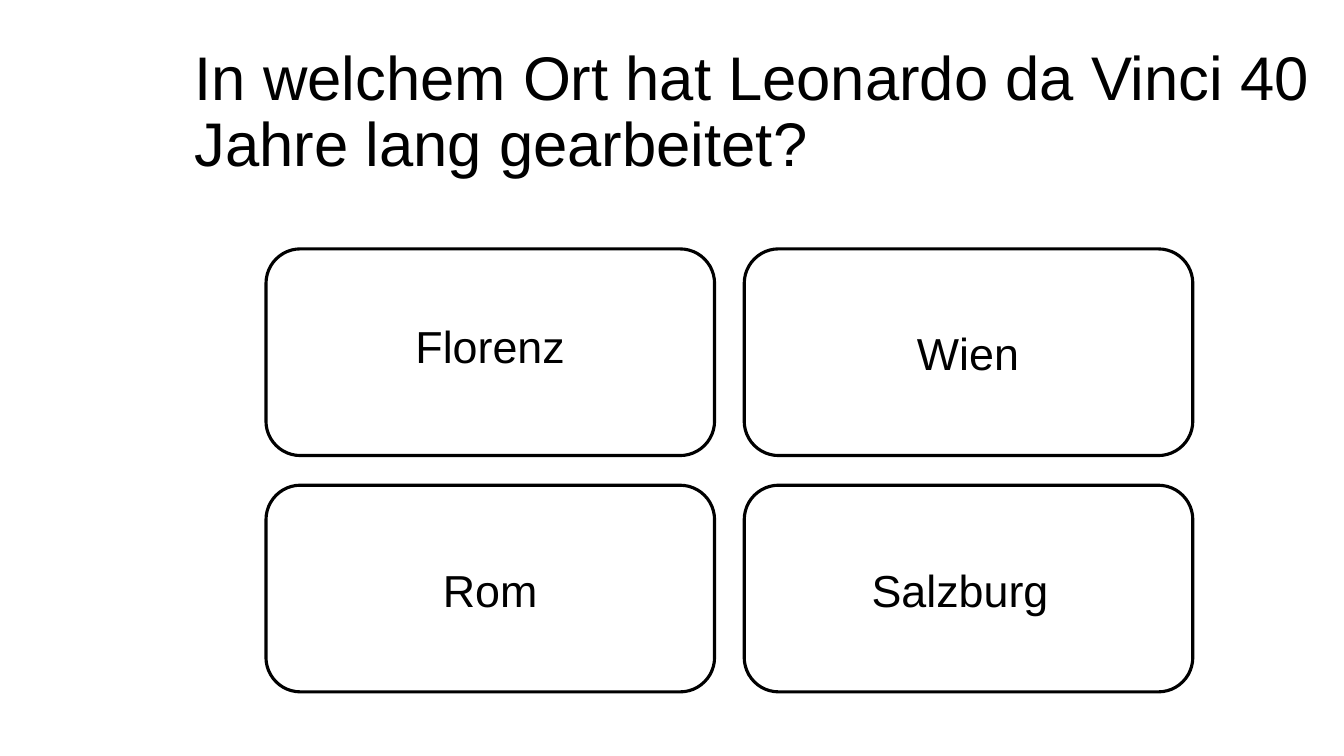
from pptx import Presentation
from pptx.dml.color import RGBColor
from pptx.enum.shapes import MSO_SHAPE
from pptx.enum.text import MSO_ANCHOR, PP_ALIGN
from pptx.util import Pt

ROUNDED = MSO_SHAPE.ROUNDED_RECTANGLE
TOP, MIDDLE = MSO_ANCHOR.TOP, MSO_ANCHOR.MIDDLE
LEFT, CENTER = PP_ALIGN.LEFT, PP_ALIGN.CENTER
BLANK_LAYOUT = 6

QUESTION = "In welchem Ort hat Leonardo da Vinci 40 Jahre lang gearbeitet?"
# Answer, left and top of its label, in reading order
ANSWERS = [
    ("Florenz", 210.2, 223.9),
    ("Wien", 551.5, 229),
    ("Rom", 210.2, 398.2),
    ("Salzburg", 545.8, 398.2),
]

INK = "000000"
COLUMNS = 2
CARD_LEFT, CARD_TOP = 190, 177.8
CARD_WIDTH, CARD_HEIGHT = 320.4, 147.6
GAP = 21.2
LABEL_WIDTH, LABEL_HEIGHT = 280, 46

QUESTION_FORMAT = {"alignment": LEFT, "line_spacing": 0.9}
ANSWER_FORMAT = {"alignment": CENTER}


def color(code):
    return RGBColor.from_string(code)


def add_text(page, text, frame, size, anchor, paragraph_format):
    box = page.shapes.add_textbox(*map(Pt, frame)).text_frame
    box.word_wrap = True
    box.vertical_anchor = anchor
    para = box.paragraphs[0]
    for name, value in paragraph_format.items():
        setattr(para, name, value)
    span = para.add_run()
    span.text = text
    for name, value in {"name": "Arial", "size": Pt(size)}.items():
        setattr(span.font, name, value)
    span.font.color.rgb = color(INK)


def add_card(page, index):
    row, column = divmod(index, COLUMNS)
    left = CARD_LEFT + column * (CARD_WIDTH + GAP)
    top = CARD_TOP + row * (CARD_HEIGHT + GAP)
    frame = (left, top, CARD_WIDTH, CARD_HEIGHT)
    card = page.shapes.add_shape(ROUNDED, *map(Pt, frame))
    card.shadow.inherit = False
    card.fill.background()
    card.line.color.rgb = color(INK)
    card.line.width = Pt(2.25)


def main():
    deck = Presentation()
    deck.slide_width, deck.slide_height = Pt(960), Pt(540)
    page = deck.slides.add_slide(deck.slide_layouts[BLANK_LAYOUT])

    add_text(page, QUESTION, (132, 28.8, 828, 104.4), 44, MIDDLE, QUESTION_FORMAT)
    for index in range(len(ANSWERS)):
        add_card(page, index)
    for answer, left, top in ANSWERS:
        frame = (left, top, LABEL_WIDTH, LABEL_HEIGHT)
        add_text(page, answer, frame, 32, TOP, ANSWER_FORMAT)

    deck.save("out.pptx")


if __name__ == "__main__":
    main()
